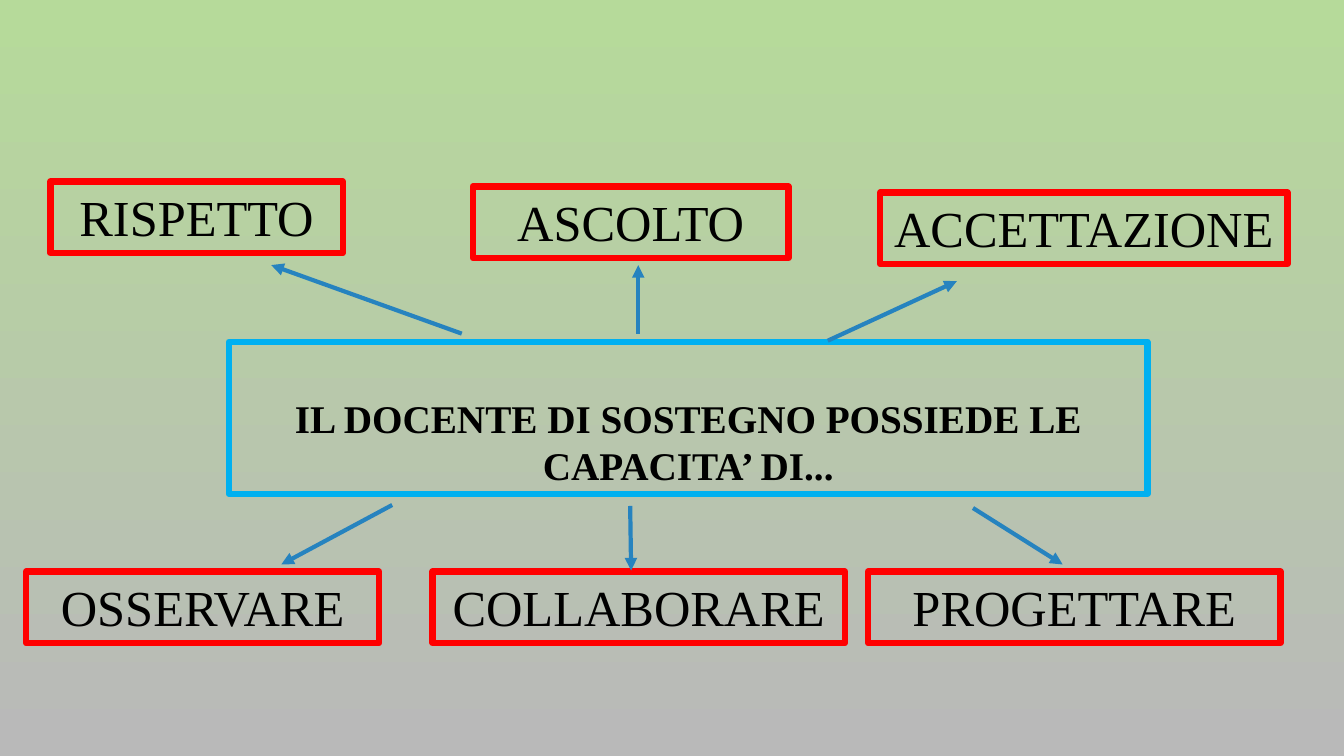
from pptx import Presentation
from pptx.dml.color import RGBColor
from pptx.enum.shapes import MSO_CONNECTOR
from pptx.enum.text import MSO_ANCHOR, MSO_AUTO_SIZE, PP_ALIGN
from pptx.oxml.ns import qn
from pptx.util import Inches, Pt
from lxml import etree

WORD_HEIGHT = 0.71
LOWER_TOP = 5.67
WORD_FORMAT = {"name": "Times New Roman", "size": Pt(36), "bold": False}
TITLE_FORMAT = {"name": "Times New Roman", "size": Pt(28), "bold": True}

# word, left, top, width
WORDS = [
    ("RISPETTO", 0.5, 1.8, 2.9),
    ("ASCOLTO", 4.69, 1.85, 3.13),
    ("ACCETTAZIONE", 8.73, 1.91, 4.04),
    ("OSSERVARE", 0.26, LOWER_TOP, 3.5),
    ("COLLABORARE", 4.29, LOWER_TOP, 4.09),
    ("PROGETTARE", 8.61, LOWER_TOP, 4.09),
]

# start x, start y, end x, end y
ARROWS = [
    (4.58, 3.31, 2.69, 2.63),
    (6.33, 3.31, 6.33, 2.63),
    (8.21, 3.38, 9.49, 2.79),
    (3.89, 5.01, 2.79, 5.6),
    (6.25, 5.02, 6.26, 5.66),
    (9.65, 5.04, 10.54, 5.6),
]


def color(value):
    return RGBColor.from_string(value)


def write_framed(box, text, frame_color, anchor, font_format):
    """Outline the box and fill it with one centred paragraph."""
    box.line.color.rgb = color(frame_color)
    box.line.width = Pt(4.5)
    frame = box.text_frame
    frame.word_wrap = True
    frame.auto_size = MSO_AUTO_SIZE.NONE
    frame.vertical_anchor = anchor
    para = frame.paragraphs[0]
    para.alignment = PP_ALIGN.CENTER
    span = para.add_run()
    span.text = text
    span.font.color.rgb = color("000000")
    for name, value in font_format.items():
        setattr(span.font, name, value)


deck = Presentation()
deck.slide_width = Inches(13.33)
deck.slide_height = Inches(7.5)
page = deck.slides.add_slide(deck.slide_layouts[5])

background = page.background.fill
background.gradient()
background.gradient_angle = 270
for stop, value in zip(background.gradient_stops, ("B6DA9A", "B9B9B9")):
    stop.color.rgb = color(value)

title = page.shapes.title
title.left, title.top = Inches(2.27), Inches(3.39)
title.width, title.height = Inches(9.11), Inches(1.51)
write_framed(title, "IL DOCENTE DI SOSTEGNO POSSIEDE LE CAPACITA’ DI...",
             "00B0F0", MSO_ANCHOR.BOTTOM, TITLE_FORMAT)

for word, left, top, width in WORDS:
    box = page.shapes.add_textbox(Inches(left), Inches(top),
                                  Inches(width), Inches(WORD_HEIGHT))
    write_framed(box, word, "FF0000", MSO_ANCHOR.TOP, WORD_FORMAT)

for points in ARROWS:
    arrow = page.shapes.add_connector(MSO_CONNECTOR.STRAIGHT,
                                      *[Inches(point) for point in points])
    arrow.line.color.rgb = color("2683BF")
    arrow.line.width = Pt(3)
    etree.SubElement(arrow.line._get_or_add_ln(), qn("a:tailEnd"), type="triangle")
    etree.SubElement(arrow._element.spPr, qn("a:effectLst"))

deck.save("out.pptx")
